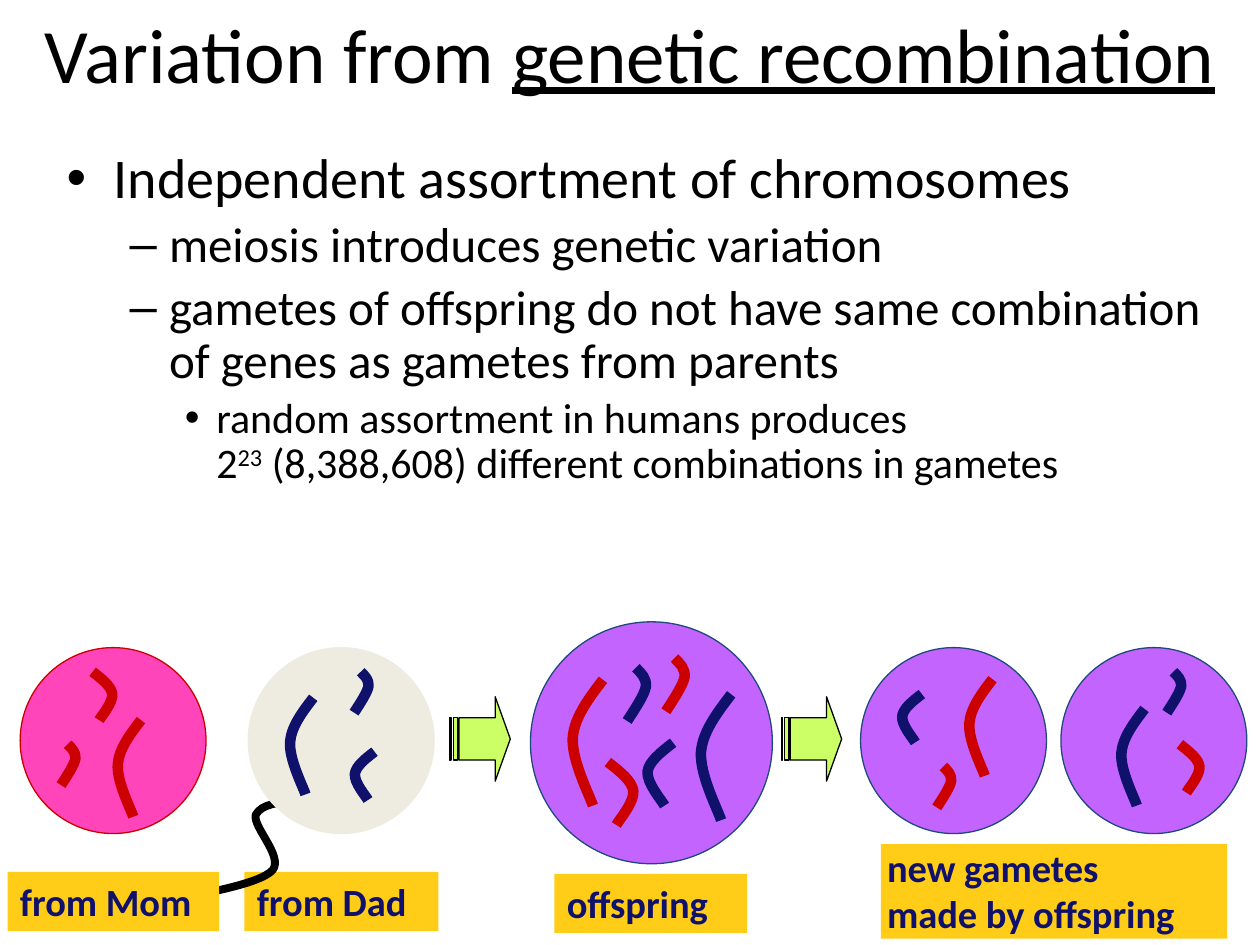
from dataclasses import dataclass
from lxml import etree
from pptx import Presentation
from pptx.dml.color import RGBColor
from pptx.enum.shapes import MSO_SHAPE
from pptx.enum.text import MSO_ANCHOR, PP_ALIGN
from pptx.oxml.ns import qn
from pptx.util import Inches, Pt

OVAL, RECT = MSO_SHAPE.OVAL, MSO_SHAPE.RECTANGLE
MIDDLE, LEFT, CENTER = MSO_ANCHOR.MIDDLE, PP_ALIGN.LEFT, PP_ALIGN.CENTER


@dataclass(frozen=True)
class Theme:
    font: str = "Calibri"
    mark: str = "Arial"
    ink: str = "000000"
    navy: str = "0F116A"
    red: str = "CC0000"
    pink: str = "FF45B9"
    cream: str = "EEECE1"
    purple: str = "C364FF"
    rim: str = "1F497D"
    gold: str = "FFCC18"
    lime: str = "CCFF66"
    title: float = 44
    levels: tuple = (32, 28, 24)
    label: float = 22
    thin: float = 0.75
    tail: float = 4.5
    gene: float = 6


T = Theme()
COLS, ROWS = 100, 75      # grid of the slide
UNIT = Inches(10) // COLS

# Each curve: start point, then cubic pieces, as shares of its box
BEND = [(1, 0), (.54, .15), (.09, .3), (.04, .46), (0, .64), (.56, .91), (.68, 1)]
CROOK = [(0, 1), (.45, .75), (.9, .5), (.97, .35), (1, .19), (.72, .1), (.45, 0)]
TAIL = [(1, 0), (.84, .01), (.69, .03), (.64, .14), (.61, .26),
        (.89, .57), (.79, .71), (.67, .86), (.13, .95), (0, 1)]

# Chromosomes: curve, width and height as shares of the cell
KINDS = {
    "long": (BEND, .13, .52),
    "mid": (BEND, .11, .26),
    "flip": ([(1 - x, y) for x, y in BEND], .11, .26),
    "short": (CROOK, .08, .22),
}


def grid(*vals):
    return [round(v * UNIT) for v in vals]


def style(shape, fill, line, width=T.thin):
    shape.shadow.inherit = False
    if fill:
        shape.fill.solid()
        shape.fill.fore_color.rgb = RGBColor.from_string(fill)
    else:
        shape.fill.background()
    if line:
        shape.line.color.rgb = RGBColor.from_string(line)
        shape.line.width = Pt(width)
    else:
        shape.line.fill.background()


def ink(par, size, color=T.ink, bold=False):
    for run in par.runs:
        run.font.name, run.font.size, run.font.bold = T.font, Pt(size), bold
        run.font.color.rgb = RGBColor.from_string(color)


def strand(slide, box, curve, color, width):
    """Open curve: every three segments become one cubic piece."""
    x, y, w, h = box
    pts = [grid(x + w * u, y + h * v) for u, v in curve]
    form = slide.shapes.build_freeform(*pts[0])
    form.add_line_segments(pts[1:], close=False)
    shape = form.convert_to_shape()
    lines = list(shape._element.iter(qn("a:lnTo")))
    for i in range(0, len(lines), 3):
        piece = etree.Element(qn("a:cubicBezTo"))
        lines[i].addprevious(piece)
        for line in lines[i:i + 3]:
            piece.append(line[0])
            line.getparent().remove(line)
    style(shape, None, color, width)


def cell(slide, box, fill, line, genes):
    x, y, d = box
    style(slide.shapes.add_shape(OVAL, *grid(x, y, d, d)), fill, line)
    for kind, u, v, color in genes:
        curve, w, h = KINDS[kind]
        strand(slide, (x + u * d, y + v * d, w * d, h * d), curve, color, T.gene)


def label(slide, box, text, pads=(1, .5, 1, .5)):
    tag = slide.shapes.add_shape(RECT, *grid(*box))
    style(tag, T.gold, None)
    frame = tag.text_frame
    frame.word_wrap, frame.vertical_anchor = True, MIDDLE
    (frame.margin_left, frame.margin_top,
     frame.margin_right, frame.margin_bottom) = grid(*pads)
    frame.text = text
    for par in frame.paragraphs:
        par.alignment = LEFT
        ink(par, T.label, T.navy, True)


def arrow(slide, box):
    """Block arrow with two bars trailing behind it."""
    x, y, w, h = box
    top, low, neck = .25, .75, .75
    bars = [[(a, top), (a, low), (b, low), (b, top)] for a, b in ((.06, .13), (0, .02))]
    head = [(neck, 0), (neck, top), (.15, top), (.15, low), (neck, low), (neck, 1), (1, .5)]
    form = None
    for part in [head] + bars:
        pts = [grid(x + w * u, y + h * v) for u, v in part]
        if form:
            form.move_to(*pts[0])
        else:
            form = slide.shapes.build_freeform(*pts[0])
        # The closing mark draws the last side
        form.add_line_segments(pts[1:], close=True)
    style(form.convert_to_shape(), T.lime, T.ink)


def title(slide, box):
    frame = slide.shapes.add_textbox(*grid(*box)).text_frame
    frame.word_wrap, frame.vertical_anchor = True, MIDDLE
    par = frame.paragraphs[0]
    par.text = "Variation from "
    par.alignment = CENTER
    term = par.add_run()
    term.text = "genetic recombination"
    ink(par, T.title)
    term.font.underline = True


def body(slide, box):
    frame = slide.shapes.add_textbox(*grid(*box)).text_frame
    frame.word_wrap = True
    indents = ((3.75, -3.75, "•"), (8.13, -3.13, "–"), (11.88, -2.5, "•"))
    lines = (
        (0, "Independent assortment of chromosomes"),
        (1, "meiosis introduces genetic variation"),
        (1, "gametes of offspring do not have same combination "
            "of genes as gametes from parents"),
        (2, "random assortment in humans produces \v2"),
    )
    for i, (level, text) in enumerate(lines):
        par = frame.add_paragraph() if i else frame.paragraphs[0]
        par.text, par.level = text, level
        par.line_spacing = 0.9
        par.space_before = Pt(T.levels[level] * 0.2)
        left, hang, mark = indents[level]
        props = par._p.get_or_add_pPr()
        props.set("marL", str(grid(left)[0]))
        props.set("indent", str(grid(hang)[0]))
        etree.SubElement(props, qn("a:buFont")).set("typeface", T.mark)
        etree.SubElement(props, qn("a:buChar")).set("char", mark)
        ink(par, T.levels[level])
    # Exponent and the rest of the last line
    power, rest = par.add_run(), par.add_run()
    power.text, rest.text = "23", " (8,388,608) different combinations in gametes"
    ink(par, T.levels[level])
    power.font._element.set("baseline", "30000")


def cross(slide):
    """Parents, offspring and new gametes along the foot of the slide."""
    red, navy = T.red, T.navy
    top, size = 51.4, 14.75
    # Father
    label(slide, (19.4, 69.2, 15.4, 4.7), "from Dad")
    strand(slide, (14.6, 63.6, 8.9, 7.7), TAIL, T.ink, T.tail)
    cell(slide, (19.7, top, size), T.cream, T.cream,
         [("long", .22, .27, navy), ("mid", .57, .56, navy), ("short", .57, .13, navy)])
    # Mother
    label(slide, (.6, 69.2, 16.8, 4.7), "from Mom")
    cell(slide, (1.6, top, size), T.pink, red,
         [("long", .52, .39, red), ("flip", .39, .13, red), ("short", .22, .52, red)])
    # Offspring
    cell(slide, (42.1, 49.35, 19.2), T.purple, T.rim,
         [("long", .17, .24, red), ("short", .56, .15, red), ("mid", .48, .5, navy),
          ("short", .4, .19, navy), ("long", .7, .3, navy), ("flip", .32, .58, red)])
    label(slide, (44, 69.35, 15.3, 4.7), "offspring")
    # New gametes
    label(slide, (69.9, 67, 27.5, 7.5), "new gametes\nmade by offspring", (.5, 0, .5, .2))
    cell(slide, (84.2, top, size), T.purple, T.rim,
         [("long", .32, .33, navy), ("short", .57, .13, navy), ("flip", .64, .52, red)])
    cell(slide, (68.3, top, size), T.purple, T.rim,
         [("long", .58, .17, red), ("short", .41, .64, red), ("mid", .22, .25, navy)])
    # Steps between stages
    for x in (35.7, 62):
        arrow(slide, (x, 55.3, 4.8, 6.7))


def main():
    deck = Presentation()
    deck.slide_width, deck.slide_height = grid(COLS, ROWS)
    slide = deck.slides.add_slide(deck.slide_layouts[6])
    title(slide, (0, 0, COLS, 8.3))
    body(slide, (4.3, 11.4, 92.5, 32.4))
    cross(slide)
    deck.save("out.pptx")


if __name__ == "__main__":
    main()
